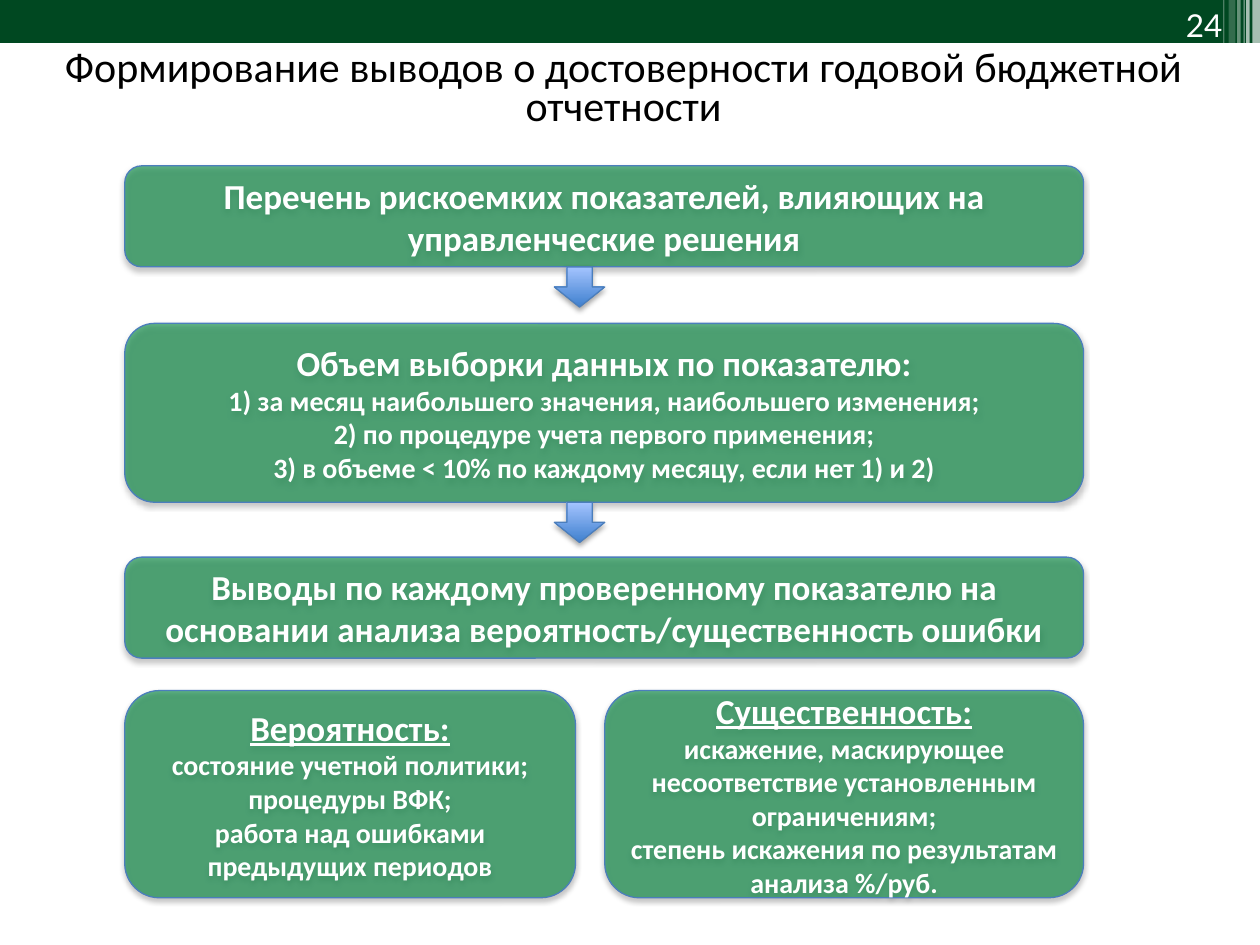
from lxml import etree
from pptx import Presentation
from pptx.dml.color import RGBColor
from pptx.enum.shapes import MSO_SHAPE
from pptx.enum.text import MSO_ANCHOR, MSO_AUTO_SIZE, PP_ALIGN
from pptx.oxml.ns import qn
from pptx.util import Pt

RECT = MSO_SHAPE.RECTANGLE
ROUNDED = MSO_SHAPE.ROUNDED_RECTANGLE
DOWN_ARROW = MSO_SHAPE.DOWN_ARROW
CENTER, RIGHT = PP_ALIGN.CENTER, PP_ALIGN.RIGHT
TOP, MIDDLE = MSO_ANCHOR.TOP, MSO_ANCHOR.MIDDLE

COLORS = {
    "band": "004821",
    "box": "00863D",
    "outline": "4B7EBC",
    "arrow_dark": "3F80CE",
    "arrow_light": "A4C4FF",
    "white": "FFFFFF",
    "black": "000000",
}
TITLE_ONLY = 5
BAND_HEIGHT = 24.5
FLOW_LEFT, FLOW_WIDTH = 71.3, 547.9
ARROW_LEFT, ARROW_WIDTH, ARROW_HEIGHT = 316.8, 28.8, 23

# left, width, height, opacity in percent
STRIPES = [
    (715.7, 4.3, BAND_HEIGHT, 65),
    (712.1, 2, BAND_HEIGHT, 65),
    (710.6, 0.7, BAND_HEIGHT, 60),
    (707, 2, BAND_HEIGHT, 40),
    (702, 4, 26, 20),
    (699, 0.7, 26, 30),
]

# top, height, heading, details, arrow below
STEPS = [
    (94.8, 57.7, "Перечень рискоемких показателей, влияющих на управленческие решения", [], True),
    (184.8, 102.2, "Объем выборки данных по показателю:", [
        "1) за месяц наибольшего значения, наибольшего изменения;",
        "2) по процедуре учета первого применения;",
        "3) в объеме < 10% по каждому месяцу, если нет 1) и 2)",
    ], True),
    (318.4, 57.7, "Выводы по каждому проверенному показателю на основании анализа "
     "вероятность/cущественность ошибки", [], False),
]

# left, width, heading, details
CRITERIA_TOP, CRITERIA_HEIGHT = 394.6, 118.4
CRITERIA = [
    (FLOW_LEFT, 257.6, "Вероятность:", [
        "cостояние учетной политики;",
        "процедуры ВФК;",
        "работа над ошибками предыдущих периодов",
    ]),
    (345.6, 273.6, "Существенность:", [
        "искажение, маскирующее несоответствие установленным ограничениям;",
        "степень искажения по результатам",
        "анализа %/руб.",
    ]),
]


def rgb(color):
    return RGBColor.from_string(COLORS[color])


def write(paragraph, text, *, size, color="white", font="Calibri", align=CENTER,
          bold=False, underline=False, line_spacing=None):
    paragraph.alignment = align
    if line_spacing:
        paragraph.line_spacing = Pt(line_spacing)
    run = paragraph.add_run()
    run.text = text
    run.font.name = font
    run.font.size = Pt(size)
    run.font.bold = bold
    run.font.underline = underline
    run.font.color.rgb = rgb(color)


def add_plain_shape(slide, preset, left, top, width, height):
    shape = slide.shapes.add_shape(preset, Pt(left), Pt(top), Pt(width), Pt(height))
    shape.shadow.inherit = False
    return shape


def fill_solid(shape, color, opacity=100):
    shape.fill.solid()
    shape.fill.fore_color.rgb = rgb(color)
    if opacity < 100:
        tone = shape._element.spPr.find(qn("a:solidFill"))[0]
        etree.SubElement(tone, qn("a:alpha"), val=str(opacity * 1000))


def outline_and_shade(shape):
    """Give the thin blue outline and the soft shadow below."""
    shape.line.color.rgb = rgb("outline")
    shape.line.width = Pt(0.75)
    effects = shape._element.spPr.find(qn("a:effectLst"))
    shadow = etree.SubElement(effects, qn("a:outerShdw"), blurRad=str(Pt(3.1)),
                              dist=str(Pt(1.8)), dir="5400000", rotWithShape="0")
    tone = etree.SubElement(shadow, qn("a:srgbClr"), val=COLORS["black"])
    etree.SubElement(tone, qn("a:alpha"), val="35000")


def add_band_part(slide, left, width, height, color, opacity=100):
    part = add_plain_shape(slide, RECT, left, 0, width, height)
    fill_solid(part, color, opacity)
    part.line.fill.background()


def add_page_number(slide, number):
    label = slide.shapes.add_textbox(Pt(640.8), Pt(0), Pt(64.8), Pt(26.6))
    label.text_frame.word_wrap = True
    write(label.text_frame.paragraphs[0], number, size=18, font="Lato", align=RIGHT)


def add_title(slide, lines):
    title = slide.shapes.title
    title.left, title.top, title.width, title.height = Pt(-9.4), Pt(26.6), Pt(731.5), Pt(52.6)
    frame = title.text_frame
    frame.auto_size = MSO_AUTO_SIZE.NONE
    frame.vertical_anchor = TOP
    for index, line in enumerate(lines):
        paragraph = frame.add_paragraph() if index else frame.paragraphs[0]
        write(paragraph, line, size=24, color="black", line_spacing=22)


def add_box(slide, left, top, width, height, heading, details, underline=False):
    box = add_plain_shape(slide, ROUNDED, left, top, width, height)
    fill_solid(box, "box", 62)
    outline_and_shade(box)
    frame = box.text_frame
    frame.word_wrap = True
    frame.vertical_anchor = MIDDLE
    write(frame.paragraphs[0], heading, size=20, bold=True, underline=underline)
    for detail in details:
        write(frame.add_paragraph(), detail, size=16, bold=True)


def add_down_arrow(slide, top):
    arrow = add_plain_shape(slide, DOWN_ARROW, ARROW_LEFT, top, ARROW_WIDTH, ARROW_HEIGHT)
    arrow.fill.gradient()
    arrow.fill.gradient_angle = 90
    for stop, color in zip(arrow.fill.gradient_stops, ("arrow_dark", "arrow_light")):
        stop.color.rgb = rgb(color)
    outline_and_shade(arrow)


def main():
    deck = Presentation()
    deck.slide_width, deck.slide_height = Pt(720), Pt(540)
    slide = deck.slides.add_slide(deck.slide_layouts[TITLE_ONLY])

    add_band_part(slide, 0, 720, BAND_HEIGHT, "band")
    for left, width, height, opacity in STRIPES:
        add_band_part(slide, left, width, height, "white", opacity)
    add_page_number(slide, "24")
    add_title(slide, ["Формирование выводов о достоверности годовой бюджетной", "отчетности"])

    for top, height, heading, details, arrow_below in STEPS:
        add_box(slide, FLOW_LEFT, top, FLOW_WIDTH, height, heading, details)
        if arrow_below:
            add_down_arrow(slide, top + height)
    for left, width, heading, details in CRITERIA:
        add_box(slide, left, CRITERIA_TOP, width, CRITERIA_HEIGHT, heading, details,
                underline=True)

    deck.save("out.pptx")


if __name__ == "__main__":
    main()
